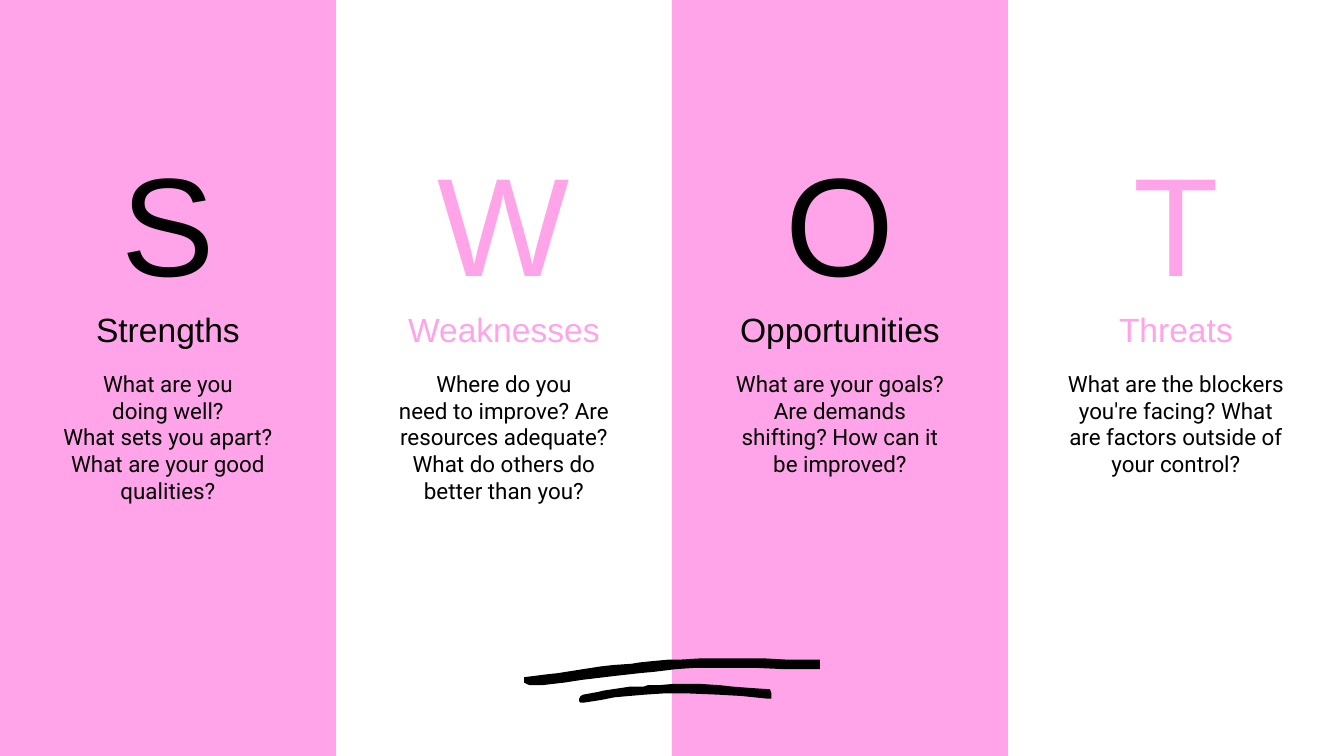
from pptx import Presentation
from pptx import util as u
from pptx.dml.color import RGBColor
from pptx.enum import shapes, text

HUES = {"pink": "FFA4E8", "ink": "000000"}
WIDE, HIGH = 25.4, 14.29
BAND = WIDE / 4
TEXT = 4.12
LINE = 0.51

# letter, heading, hue, lines of room, body paragraphs
PARTS = [
    ("S", "Strengths", "ink", 5,
     ["What are you", "doing well?",
      "What sets you apart? What are your good qualities?"]),
    ("W", "Weaknesses", "pink", 6,
     ["Where do you", "need to improve? Are resources adequate?",
      "What do others do better than you?"]),
    ("O", "Opportunities", "ink", 4,
     ["What are your goals? Are demands shifting? How can it be improved?"]),
    ("T", "Threats", "pink", 5,
     ["What are the blockers you're facing? "
      "What are factors outside of your control?"]),
]

# Outlines of the two brush strokes, in hundredths of an inch
STROKES = [
    [(573, 513), (574, 516), (574, 520), (571, 520), (552, 518), (534, 517),
     (510, 516), (495, 516), (480, 517), (468, 518), (457, 519), (447, 521),
     (434, 523), (432, 523), (431, 522), (431, 520), (432, 518), (434, 517),
     (445, 515), (449, 514), (469, 511), (479, 511), (482, 510), (490, 510),
     (501, 509), (521, 509), (536, 510), (545, 511), (558, 512)],
    [(604, 491), (594, 491), (587, 491), (569, 490), (556, 490), (554, 490),
     (537, 490), (521, 490), (505, 491), (497, 491), (486, 492), (476, 493),
     (470, 494), (456, 495), (447, 496), (434, 498), (415, 501), (406, 502),
     (398, 503), (390, 504), (390, 508), (392, 509), (394, 510), (403, 510),
     (420, 508), (433, 506), (458, 503), (476, 501), (487, 500), (503, 498),
     (518, 497), (543, 497), (561, 497), (583, 498), (610, 498), (610, 491)],
]


def paint(shape, hue):
    shape.fill.solid()
    shape.fill.fore_color.rgb = RGBColor.from_string(HUES[hue])
    shape.line.fill.background()
    shape.shadow.inherit = False


def add_band(slide, left):
    band = slide.shapes.add_shape(shapes.MSO_SHAPE.RECTANGLE, u.Cm(left), 0,
                                  u.Cm(BAND), u.Cm(HIGH))
    paint(band, "pink")


def add_text(group, left, top, high, lines, font, size, hue, gap=None):
    box = group.shapes.add_textbox(u.Cm(left), u.Cm(top), u.Cm(TEXT), u.Cm(high))
    frame = box.text_frame
    frame.word_wrap = True
    frame.margin_left = frame.margin_right = 0
    frame.margin_top = frame.margin_bottom = 0
    frame.text = "\n".join(lines)
    for para in frame.paragraphs:
        para.alignment = text.PP_ALIGN.CENTER
        para.line_spacing = gap
        para.font.name = font
        para.font.size = u.Pt(size)
        para.font.color.rgb = RGBColor.from_string(HUES[hue])


def add_part(slide, left, part):
    letter, head, hue, rows, body = part
    group = slide.shapes.add_group_shape()
    add_text(group, left, 2.26, 3.2, [letter], "Arial", 75, hue, 1.1)
    add_text(group, left, 6.99, rows * LINE, body, "Roboto", 12, "ink")
    add_text(group, left, 5.84, 0.76, [head], "Arial", 18, hue)


def add_strokes(slide):
    first, *rest = STROKES
    pen = slide.shapes.build_freeform(*first[0], scale=u.Cm(2.54) / 100)
    pen.add_line_segments(first[1:])
    for stroke in rest:
        pen.move_to(*stroke[0])
        pen.add_line_segments(stroke[1:])
    paint(pen.convert_to_shape(), "ink")


def main():
    deck = Presentation()
    deck.slide_width, deck.slide_height = u.Cm(WIDE), u.Cm(HIGH)
    slide = deck.slides.add_slide(deck.slide_layouts.get_by_name("Blank"))
    for col in (0, 2):
        add_band(slide, col * BAND)
    for col, part in enumerate(PARTS):
        add_part(slide, col * BAND + (BAND - TEXT) / 2, part)
    add_strokes(slide)
    deck.save("out.pptx")


if __name__ == "__main__":
    main()
